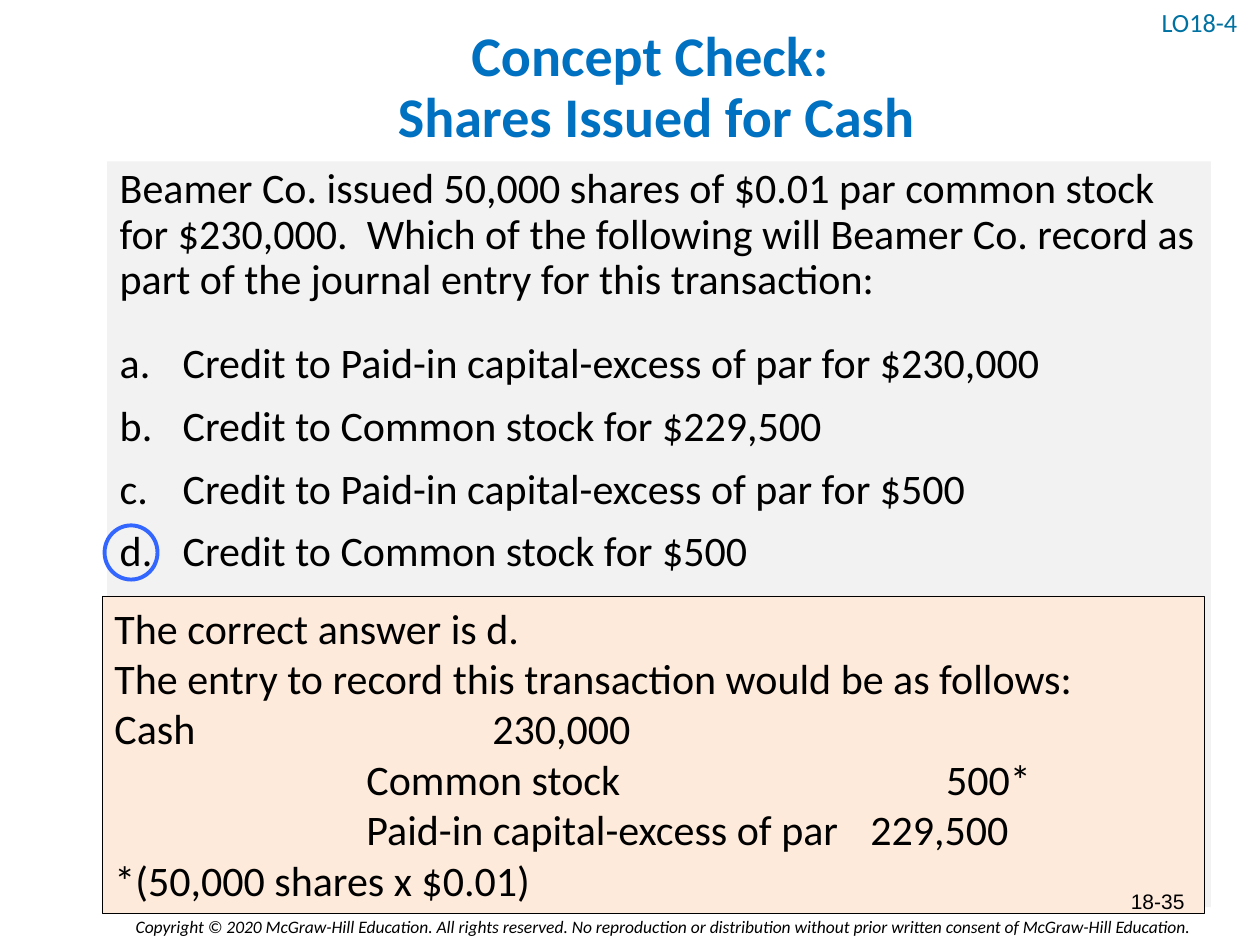
from lxml.etree import SubElement
from pptx import Presentation
from pptx.dml.color import RGBColor
from pptx.enum.shapes import MSO_SHAPE as Shape
from pptx.enum.text import MSO_ANCHOR as Anchor, MSO_AUTO_SIZE as AutoSize, PP_ALIGN as Align
from pptx.oxml.ns import qn
from pptx.util import Inches, Pt

THEME = {
    "title": {"name": "Calibri", "size": 32, "bold": True, "color": "0070C0"},
    "body": {"name": "Calibri", "size": 24, "bold": False, "color": "000000"},
    "objective": {"name": "Calibri", "size": 15, "color": "0072A2"},
    "copyright": {"name": "Calibri", "size": 10, "italic": True, "color": "000000"},
    "number": {"name": "Arial", "size": 12, "color": "000000"},
    "question_fill": "F2F2F2",
    "answer_fill": "FDEADA",
    "answer_line": "000000",
    "ring": "3366FF",
}

TITLE = "Concept Check: \vShares Issued for Cash"
QUESTION = (
    "Beamer Co. issued 50,000 shares of $0.01 par common stock for $230,000.  "
    "Which of the following will Beamer Co. record as part of the journal entry "
    "for this transaction:"
)
CHOICES = [
    "Credit to Paid-in capital-excess of par for $230,000",
    "Credit to Common stock for $229,500",
    "Credit to Paid-in capital-excess of par for $500",
    "Credit to Common stock for $500",
]
ANSWER = [
    ("The correct answer is d.", ()),
    ("The entry to record this transaction would be as follows:", ()),
    ("Cash\t230,000", (3,)),
    ("\tCommon stock\t500*", (2, 6.6)),
    ("\tPaid-in capital-excess of par\t229,500", (2, 6)),
    ("*(50,000 shares x $0.01)", ()),
]
LABELS = [
    ("LO18-4", "objective", (9.12, 0, 0.98, 0.35), Align.LEFT, Anchor.TOP),
    ("18-35", "number", (7.17, 6.95, 2.33, 0.4), Align.RIGHT, Anchor.MIDDLE),
    (
        "Copyright © 2020 McGraw-Hill Education. All rights reserved. No reproduction or "
        "distribution without prior written consent of McGraw-Hill Education.",
        "copyright", (0.45, 7.22, 9.09, 0.27), Align.RIGHT, Anchor.TOP,
    ),
]


def rgb(value):
    return RGBColor.from_string(value)


def place(part, box):
    for side, length in zip(("left", "top", "width", "height"), box):
        setattr(part, side, Inches(length))


def write(paragraph, text, style, **layout):
    paragraph.text = text
    for key, value in layout.items():
        setattr(paragraph, key, value)
    for run in paragraph.runs:
        for key, value in THEME[style].items():
            if key == "color":
                run.font.color.rgb = rgb(value)
            else:
                setattr(run.font, key, Pt(value) if key == "size" else value)


def set_frame(part, anchor=Anchor.TOP):
    frame = part.text_frame
    for key, value in {"word_wrap": True, "auto_size": AutoSize.NONE, "vertical_anchor": anchor}.items():
        setattr(frame, key, value)
    return frame


def paragraphs(frame, count):
    return [frame.paragraphs[0]] + [frame.add_paragraph() for _ in range(count - 1)]


def set_bullet(paragraph, indent=0, numbering=None):
    props = paragraph._p.get_or_add_pPr()
    props.set("marL", str(Inches(indent)))
    props.set("indent", str(-Inches(indent)))
    if numbering:
        SubElement(props, qn("a:buFont"), typeface="+mj-lt")
        SubElement(props, qn("a:buAutoNum"), type=numbering)
    else:
        SubElement(props, qn("a:buNone"))


def set_tabs(paragraph, stops):
    tabs = SubElement(paragraph._p.get_or_add_pPr(), qn("a:tabLst"))
    for stop in stops:
        SubElement(tabs, qn("a:tab"), pos=str(Inches(stop)), algn="l")


def add_outlined(slide, preset, box, line, weight, fill=None):
    part = slide.shapes.add_shape(preset, *map(Inches, box))
    part.shadow.inherit = False
    part.line.color.rgb = rgb(line)
    part.line.width = Pt(weight)
    if fill:
        part.fill.solid()
        part.fill.fore_color.rgb = rgb(fill)
    else:
        part.fill.background()
    return part


def main():
    deck = Presentation()
    deck.slide_width, deck.slide_height = Inches(10), Inches(7.5)
    slide = deck.slides.add_slide(deck.slide_layouts[1])
    title, body = slide.placeholders

    place(title, (0.83, 0.19, 8.76, 1.03))
    heading = set_frame(title, Anchor.MIDDLE).paragraphs[0]
    write(heading, TITLE, "title", alignment=Align.CENTER, line_spacing=0.9)

    place(body, (0.85, 1.28, 8.76, 5.92))
    body.fill.solid()
    body.fill.fore_color.rgb = rgb(THEME["question_fill"])
    question, *choices = paragraphs(set_frame(body), 1 + len(CHOICES))
    set_bullet(question)
    write(question, QUESTION, "body", line_spacing=0.9, space_before=Pt(0), space_after=Pt(12))
    for choice, text in zip(choices, CHOICES):
        set_bullet(choice, 0.5, "alphaLcPeriod")
        write(choice, text, "body", line_spacing=0.9, space_before=Pt(10))

    add_outlined(slide, Shape.OVAL, (0.83, 4.17, 0.42, 0.43), THEME["ring"], 2.25)

    answer = add_outlined(slide, Shape.RECTANGLE, (0.81, 4.73, 8.75, 2.52),
                          THEME["answer_line"], 0.5, THEME["answer_fill"])
    entries = paragraphs(set_frame(answer), len(ANSWER))
    for entry, (text, stops) in zip(entries, ANSWER):
        if stops:
            set_tabs(entry, stops)
        write(entry, text, "body", alignment=Align.LEFT)

    for text, style, box, align, anchor in LABELS:
        label = slide.shapes.add_textbox(*map(Inches, box))
        write(set_frame(label, anchor).paragraphs[0], text, style, alignment=align)

    deck.save("out.pptx")


if __name__ == "__main__":
    main()
